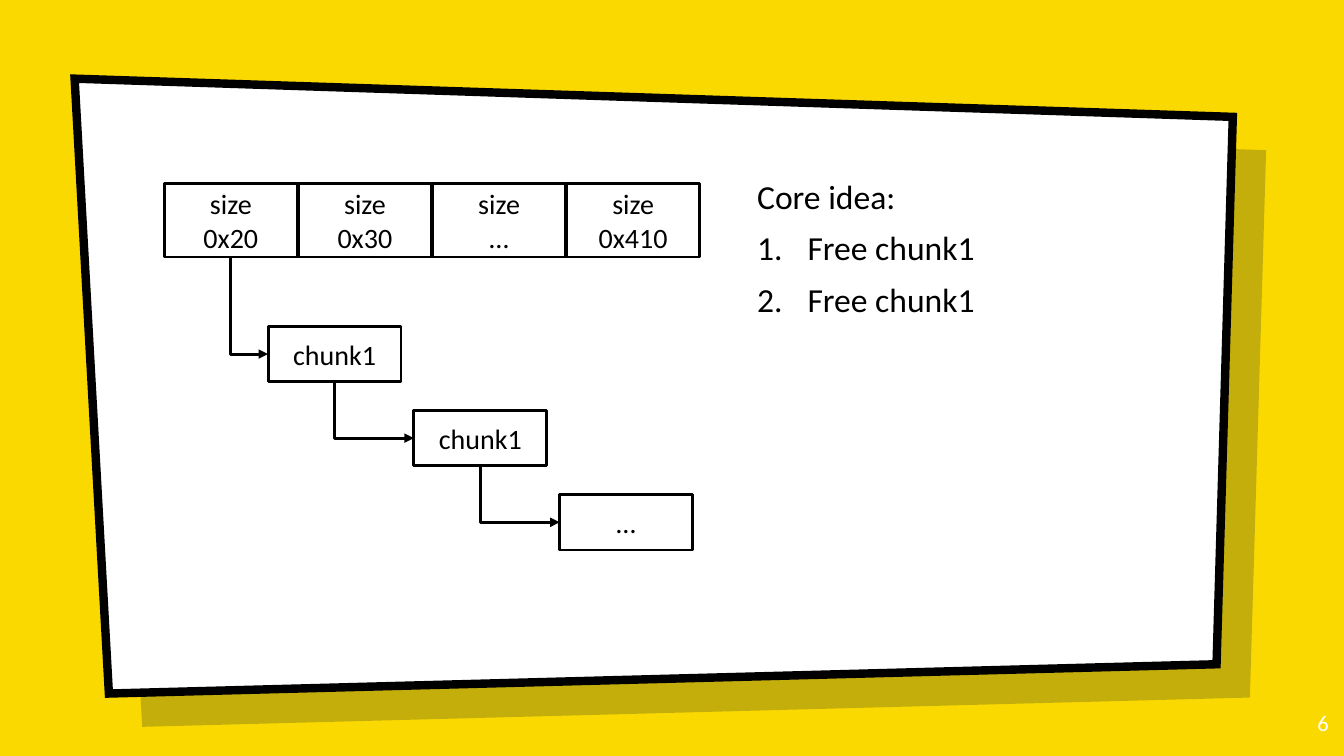
from lxml import etree
from pptx import Presentation
from pptx.dml.color import RGBColor
from pptx.enum.shapes import MSO_CONNECTOR as Connector, MSO_SHAPE as Shape
from pptx.enum.text import MSO_ANCHOR as Anchor, PP_ALIGN as Align
from pptx.oxml.ns import qn
from pptx.util import Pt

BLACK, WHITE = "000000", "FFFFFF"


def paint(color_format, hex_color):
    """Make a fill solid in the given colour."""
    color_format.solid()
    color_format.fore_color.rgb = RGBColor.from_string(hex_color)


def write(frame, lines, size, color, align):
    """Fill a text frame with one paragraph per line."""
    frame.word_wrap = True
    frame.text = "\n".join(lines)
    for para in frame.paragraphs:
        para.alignment = align
        for name, value in {"name": "Calibri", "size": Pt(size)}.items():
            setattr(para.font, name, value)
        paint(para.font.fill, color)


deck = Presentation()
deck.slide_width, deck.slide_height = Pt(960), Pt(540)
slide = deck.slides.add_slide(deck.slide_layouts[6])
paint(slide.background.fill, "FAD900")
shapes = slide.shapes

# Tilted panel over its offset shade
corners = [(53.3, 56.2), (880.6, 83.5), (869, 474.5), (77.8, 495.4)]
for offset, color in [(23.8, "001936"), (0, WHITE)]:
    points = [(Pt(x + offset), Pt(y + offset)) for x, y in corners]
    builder = shapes.build_freeform(*points[0])
    builder.add_line_segments(points[1:], close=True)
    panel = builder.convert_to_shape()
    panel.shadow.inherit = False
    paint(panel.fill, color)
    if offset:
        panel.line.fill.background()
        tint = panel.element.spPr.find(qn("a:solidFill"))[0]
        etree.SubElement(tint, qn("a:alpha"), val="22000")
    else:
        paint(panel.line.fill, BLACK)
        panel.line.width = Pt(6)
        outline = panel.element.spPr.find(qn("a:ln"))
        etree.SubElement(outline, qn("a:miter"), lim="800000")

# Row of size bins, then a staircase of chunks
cells = [(117.4 + 95.8 * i, 131, 52.6, ["size", label])
         for i, label in enumerate(["0x20", "0x30", "…", "0x410"])]
cells += [(191.5 + 104.1 * i, 233.1 + 60.1 * i, 39.6, [label])
          for i, label in enumerate(["chunk1", "chunk1", "…"])]
boxes = []
for left, top, height, lines in cells:
    box = shapes.add_shape(Shape.RECTANGLE, Pt(left), Pt(top), Pt(95), Pt(height))
    box.shadow.inherit = False
    paint(box.fill, WHITE)
    paint(box.line.fill, BLACK)
    box.line.width = Pt(2)
    box.text_frame.vertical_anchor = Anchor.MIDDLE
    write(box.text_frame, lines, 20, BLACK, Align.CENTER)
    boxes.append(box)

# Elbow arrows: down from one box, then right into the next
chain = [boxes[0]] + boxes[4:]
for source, target in zip(chain, chain[1:]):
    x, y = source.left + source.width // 2, source.top + source.height
    run, drop = target.left - x, target.top + target.height // 2 - y
    arrow = shapes.add_connector(Connector.ELBOW, x, y, x + run, y + drop)
    arrow.begin_connect(source, 2)
    arrow.end_connect(target, 1)
    arrow.left, arrow.top = x + (run - drop) // 2, y + (drop - run) // 2
    arrow.width, arrow.height = drop, run
    properties = arrow.element.spPr
    frame = properties.find(qn("a:xfrm"))
    frame.set("rot", "16200000")
    frame.set("flipH", "1")
    properties.find(qn("a:prstGeom")).set("prst", "bentConnector2")
    paint(arrow.line.fill, BLACK)
    arrow.line.width = Pt(2.25)
    etree.SubElement(properties.find(qn("a:ln")), qn("a:tailEnd"), type="triangle")
    etree.SubElement(properties, qn("a:effectLst"))

# Core idea list and page number
texts = [
    (529.2, 118.1, 313.2, 303.1, ["Core idea:", "Free chunk1", "Free chunk1"], 24, BLACK, Align.LEFT),
    (898.6, 499, 57.6, 41, ["6"], 16, WHITE, Align.RIGHT),
]
for left, top, width, height, lines, size, color, align in texts:
    box = shapes.add_textbox(Pt(left), Pt(top), Pt(width), Pt(height))
    for side in ("left", "top", "right", "bottom"):
        setattr(box.text_frame, f"margin_{side}", Pt(7.2))
    write(box.text_frame, lines, size, color, align)
    if len(lines) == 1:
        continue
    for number, para in enumerate(box.text_frame.paragraphs):
        layout = para._p.get_or_add_pPr()
        layout.set("marL", str(Pt(40.5 if number else 4.5)))
        if number:
            para.space_before = Pt(8)
            layout.set("indent", str(Pt(-36)))
            bullet = etree.Element(qn("a:buAutoNum"), type="arabicPeriod")
            layout.find(qn("a:defRPr")).addprevious(bullet)

deck.save("out.pptx")
